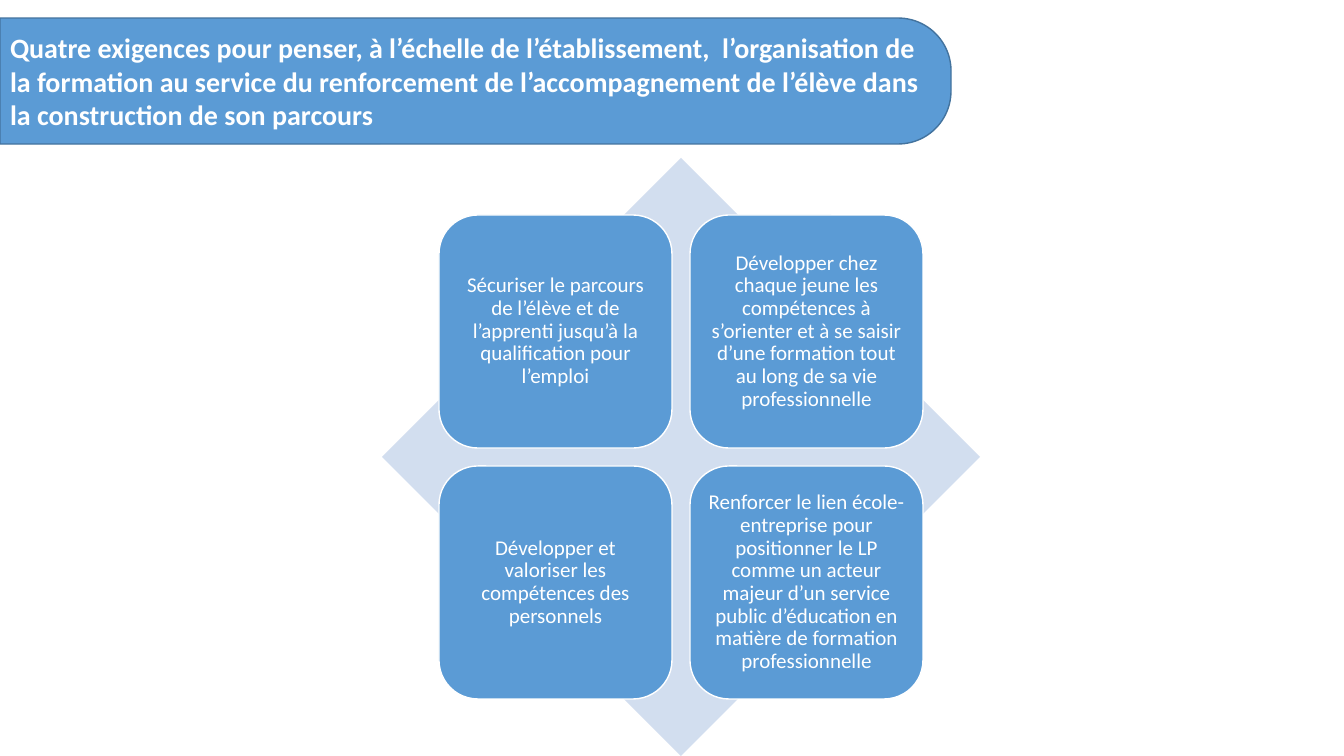
from pptx import Presentation
from pptx.dml.color import RGBColor
from pptx.enum.shapes import MSO_SHAPE
from pptx.enum.text import MSO_ANCHOR, MSO_AUTO_SIZE, PP_ALIGN
from pptx.util import Emu, Pt

DIAMOND = MSO_SHAPE.DIAMOND
ROUNDED = MSO_SHAPE.ROUNDED_RECTANGLE
ROUND_TOP = MSO_SHAPE.ROUND_2_SAME_RECTANGLE
LEFT, CENTER = PP_ALIGN.LEFT, PP_ALIGN.CENTER
MIDDLE = MSO_ANCHOR.MIDDLE
NO_AUTOFIT = MSO_AUTO_SIZE.NONE

PX_PER_INCH = 100.8
WIDTH, HEIGHT = 1344, 756

TITLE = (
    "Quatre exigences pour penser, à l’échelle de l’établissement,  "
    "l’organisation de la formation au service du renforcement de "
    "l’accompagnement de l’élève dans la construction de son parcours"
)
REQUIREMENTS = [
    "Sécuriser le parcours de l’élève et de l’apprenti jusqu’à la "
    "qualification pour l’emploi",
    "Développer chez chaque jeune les compétences à s’orienter et à se "
    "saisir d’une formation tout au long de sa vie professionnelle",
    "Développer et valoriser les compétences des personnels",
    "Renforcer le lien école-entreprise pour positionner le LP comme un "
    "acteur majeur d’un service public d’éducation en matière de formation "
    "professionnelle",
]


def px(length):
    return Emu(round(length * 914400 / PX_PER_INCH))


def color(hex_string):
    return RGBColor.from_string(hex_string)


def write(shape, text, size, bold=False, align=CENTER, spacing=1.0,
          insets=(6, 6, 6, 6)):
    frame = shape.text_frame
    frame.word_wrap = True
    frame.auto_size = NO_AUTOFIT
    frame.vertical_anchor = MIDDLE
    (frame.margin_left, frame.margin_top,
     frame.margin_right, frame.margin_bottom) = map(px, insets)
    paragraph = frame.paragraphs[0]
    paragraph.alignment = align
    paragraph.line_spacing = spacing
    paragraph.space_before = Pt(0)
    run = paragraph.add_run()
    run.text = text
    run.font.name = SlideBuilder.FONT
    run.font.size = Pt(size)
    run.font.bold = bold
    run.font.color.rgb = color(SlideBuilder.WHITE)


class SlideBuilder:
    FONT = "Calibri"
    WHITE = "FFFFFF"
    BLUE = "5B9BD5"
    DARK_BLUE = "43739E"
    PALE_BLUE = "D2DEEF"

    def __init__(self, slide):
        self.slide = slide

    def shape(self, kind, left, top, width, height, fill, line=None):
        shape = self.slide.shapes.add_shape(
            kind, px(left), px(top), px(width), px(height))
        shape.shadow.inherit = False
        shape.fill.solid()
        shape.fill.fore_color.rgb = color(fill)
        if line:
            shape.line.color.rgb = color(line)
            shape.line.width = Pt(1)
        else:
            shape.line.fill.background()
        return shape

    def title_banner(self, text, top, width, height):
        # The band is a top-rounded rectangle turned to point right
        band = self.shape(ROUND_TOP, (width - height) / 2,
                          top + (height - width) / 2, height, width,
                          self.BLUE, self.DARK_BLUE)
        band.rotation = 90
        band.adjustments[0] = 0.42
        band.adjustments[1] = 0

        # The title is drawn in front of its band
        title = self.slide.shapes.title
        band._element.addnext(title._element)
        title.left, title.top = px(0), px(top)
        title.width, title.height = px(width), px(height)
        write(title, text, 20, bold=True, align=LEFT, insets=(10, 5, 25, 5))

    def card(self, text, left, top, size):
        card = self.shape(ROUNDED, left, top, size, size,
                          self.BLUE, self.WHITE)
        write(card, text, 15, spacing=0.9)

    def matrix(self, texts, left, top, size, card_size, gap):
        self.shape(DIAMOND, left, top, size, size, self.PALE_BLUE)
        margin = (size - 2 * card_size - gap) // 2
        pitch = card_size + gap
        for index, text in enumerate(texts):
            row, column = divmod(index, 2)
            self.card(text, left + margin + column * pitch,
                      top + margin + row * pitch, card_size)


def main():
    presentation = Presentation()
    presentation.slide_width = px(WIDTH)
    presentation.slide_height = px(HEIGHT)
    title_only = presentation.slide_layouts[5]
    builder = SlideBuilder(presentation.slides.add_slide(title_only))

    # Title
    builder.title_banner(TITLE, top=18, width=951, height=126)

    # Four requirements on a diamond
    builder.matrix(REQUIREMENTS, left=382, top=158, size=598,
                   card_size=233, gap=18)

    presentation.save("out.pptx")


if __name__ == "__main__":
    main()
